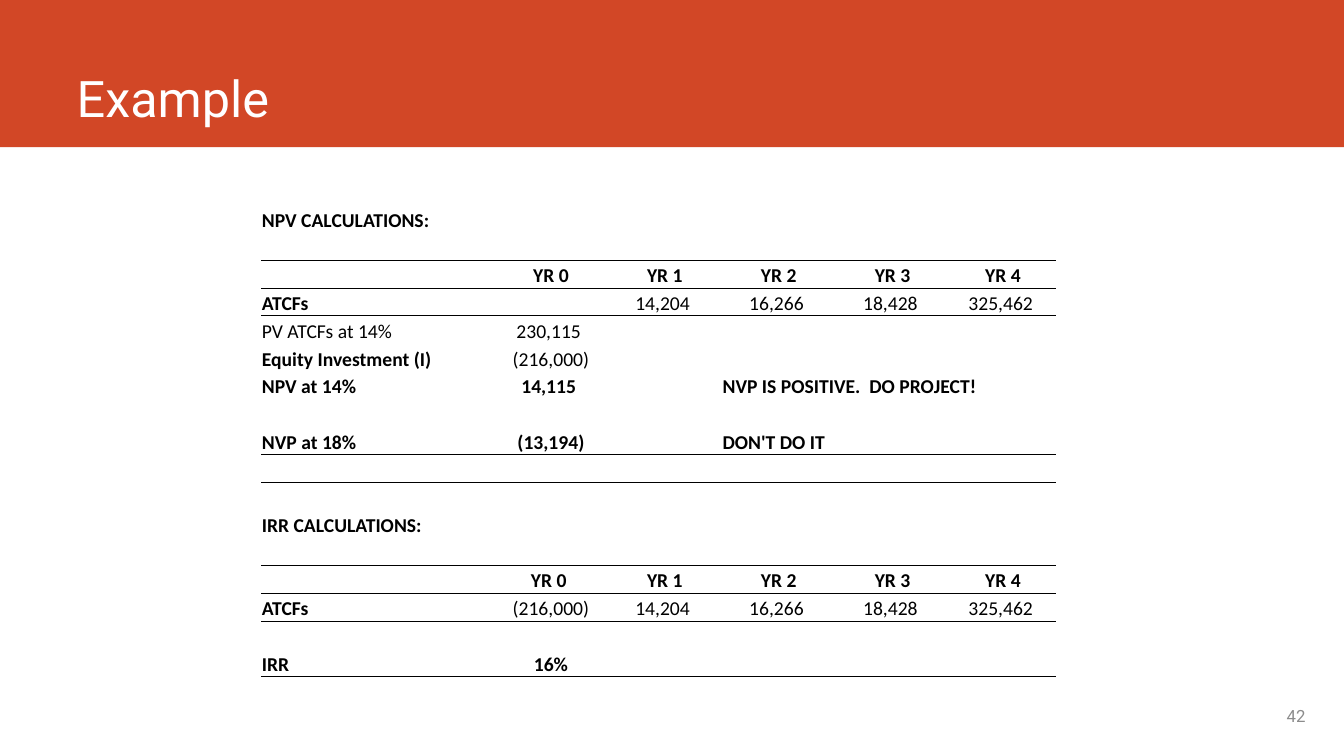
from lxml.etree import SubElement
from pptx import Presentation
from pptx.dml.color import RGBColor
from pptx.enum.shapes import MSO_SHAPE
from pptx.enum.text import MSO_ANCHOR, MSO_AUTO_SIZE, PP_ALIGN
from pptx.oxml.ns import qn
from pptx.util import Cm, Pt

ORANGE = RGBColor(0xD2, 0x47, 0x26)
WHITE = RGBColor(0xFF, 0xFF, 0xFF)
BLACK = RGBColor(0x00, 0x00, 0x00)
GRAY = RGBColor(0x8C, 0x8C, 0x8C)
PLAIN_TABLE_STYLE = "{2D5ABB26-0587-4C30-8999-92F81FD0307C}"

COLUMN_WIDTHS = [5.87, 2.87, 2.87, 2.87, 2.87, 2.69]
ROW_HEIGHT = 0.7
YEARS = ["YR 1", "YR 2", "YR 3", "YR 4"]
CASH_FLOWS = ["14,204 ", "16,266 ", "18,428 ", "325,462 "]

# Each row: label, label bold, values, values bold, verdict
BLANK = ("", False, [], False, "")
ROWS = [
    ("NPV CALCULATIONS:", True, [], False, ""),
    BLANK,
    ("", False, ["YR 0", *YEARS], True, ""),
    ("ATCFs", True, ["", *CASH_FLOWS], False, ""),
    ("PV ATCFs at 14%", False, ["230,115 "], False, ""),
    ("Equity Investment (I)", True, ["(216,000)"], False, ""),
    ("NPV at 14%", True, ["14,115 "], True, "NVP IS POSITIVE.  DO PROJECT!"),
    BLANK,
    ("NVP at 18%", True, ["(13,194)"], True, "DON'T DO IT"),
    BLANK,
    BLANK,
    ("IRR CALCULATIONS:", True, [], False, ""),
    BLANK,
    ("", False, ["YR 0 ", *YEARS], True, ""),
    ("ATCFs", True, ["(216,000)", *CASH_FLOWS], False, ""),
    BLANK,
    ("IRR", True, ["16%"], True, ""),
]
RULED_ROWS = {1, 2, 8, 12, 13, 16}
VERDICT_COLUMN = 3
MERGED_VERDICT_ROW = 6


def add_text(paragraph, text, font_name, size, color, bold=False):
    """Append one formatted run to a paragraph."""
    run = paragraph.add_run()
    run.text = text
    run.font.name = font_name
    run.font.size = Pt(size)
    run.font.color.rgb = color
    run.font.bold = bold


def add_rule(cell, edge):
    """Draw a thin black border on one edge of a cell."""
    line = SubElement(cell._tc.get_or_add_tcPr(), qn(f"a:{edge}"), w=str(Pt(0.5)))
    fill = SubElement(line, qn("a:solidFill"))
    SubElement(fill, qn("a:srgbClr"), val=str(BLACK))


def fill_cell(cell, text, bold, align):
    """Format a calculation cell and write its text."""
    cell.fill.background()
    cell.vertical_anchor = MSO_ANCHOR.BOTTOM
    cell.margin_left = cell.margin_right = cell.margin_top = Cm(0.02)
    cell.margin_bottom = 0
    paragraph = cell.text_frame.paragraphs[0]
    paragraph.alignment = align
    if text:
        add_text(paragraph, text, "Calibri", 14, BLACK, bold)
    else:
        SubElement(paragraph._p, qn("a:endParaRPr"), sz="1400")


def add_header(slide, left, top, width, height):
    """Place the coloured band with the slide title on it."""
    band = slide.shapes.add_shape(MSO_SHAPE.RECTANGLE, left, top, width, height)
    band.shadow.inherit = False
    band.fill.solid()
    band.fill.fore_color.rgb = ORANGE
    band.line.fill.background()
    slide.shapes._spTree.insert(2, band._element)

    title = slide.shapes.title
    title.left, title.top = left + Cm(1.68), top
    title.width, title.height = width - Cm(4), height - Cm(0.36)
    frame = title.text_frame
    frame.auto_size = MSO_AUTO_SIZE.NONE
    frame.vertical_anchor = MSO_ANCHOR.BOTTOM
    frame.paragraphs[0].alignment = PP_ALIGN.LEFT
    add_text(frame.paragraphs[0], "Example", "Roboto", 36, WHITE)


def add_calculations(slide, left, top, width, height):
    """Place the table of NPV and IRR calculations."""
    graphic = slide.shapes.add_table(len(ROWS), len(COLUMN_WIDTHS), left, top, width, height)
    table = graphic.table
    table.first_row = table.horz_banding = False
    table._tbl.tblPr.find(qn("a:tableStyleId")).text = PLAIN_TABLE_STYLE
    for column, column_width in zip(table.columns, COLUMN_WIDTHS):
        column.width = Cm(column_width)
    for r, (label, label_bold, values, values_bold, verdict) in enumerate(ROWS):
        table.rows[r].height = Cm(ROW_HEIGHT)
        texts = [label, *values] + [""] * (len(COLUMN_WIDTHS) - 1 - len(values))
        if verdict:
            texts[VERDICT_COLUMN] = verdict
        for c, text in enumerate(texts):
            cell = table.cell(r, c)
            if r - 1 in RULED_ROWS:
                add_rule(cell, "lnT")
            if r in RULED_ROWS:
                add_rule(cell, "lnB")
            is_left = c == 0 or (verdict and c == VERDICT_COLUMN)
            align = PP_ALIGN.LEFT if is_left else PP_ALIGN.CENTER
            fill_cell(cell, text, values_bold if c else label_bold, align)
    verdict_cell = table.cell(MERGED_VERDICT_ROW, VERDICT_COLUMN)
    verdict_cell.merge(table.cell(MERGED_VERDICT_ROW, len(COLUMN_WIDTHS) - 1))


def add_page_number(slide, left, top, width, height):
    """Place the page number at the right of its box."""
    page_number = slide.shapes.add_textbox(left, top, width, height)
    frame = page_number.text_frame
    frame.word_wrap = True
    frame.vertical_anchor = MSO_ANCHOR.MIDDLE
    frame.paragraphs[0].alignment = PP_ALIGN.RIGHT
    add_text(frame.paragraphs[0], "42", "Roboto", 12, GRAY)


def main():
    """Build and save the slide."""
    deck = Presentation()
    deck.slide_width, deck.slide_height = Cm(33.87), Cm(19.05)
    slide = deck.slides.add_slide(deck.slide_layouts[5])
    add_header(slide, 0, 0, deck.slide_width, Cm(3.71))
    add_calculations(slide, Cm(6.58), Cm(5.16), Cm(sum(COLUMN_WIDTHS)), Cm(ROW_HEIGHT * len(ROWS)))
    add_page_number(slide, Cm(24.05), Cm(17.53), Cm(9.1), Cm(1.02))
    deck.save("out.pptx")


if __name__ == "__main__":
    main()
